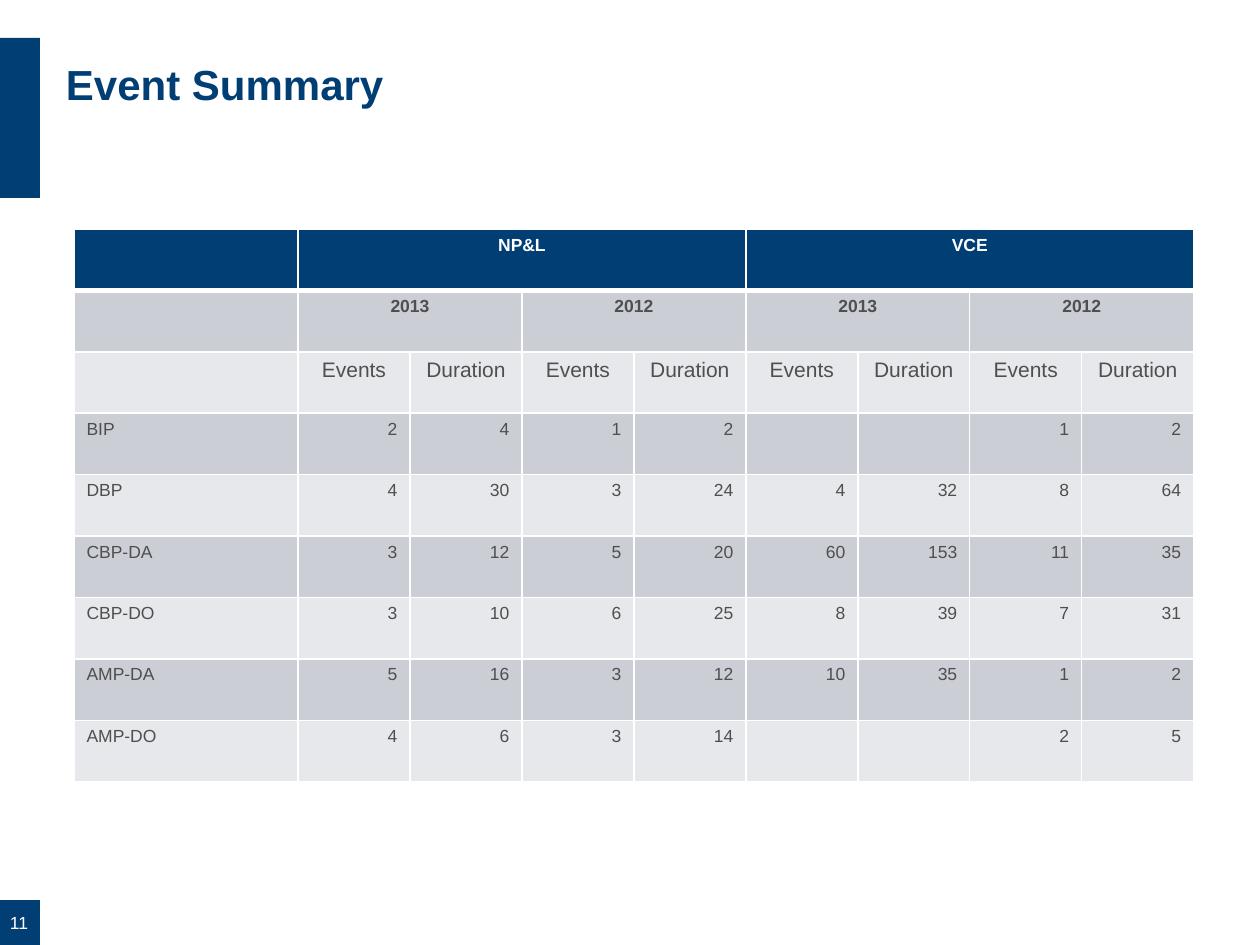
"""Build the Event Summary slide with its table of events and durations."""
from lxml import etree
from pptx import Presentation
from pptx.dml.color import RGBColor
from pptx.enum.shapes import MSO_SHAPE
from pptx.enum.text import MSO_ANCHOR, PP_ALIGN
from pptx.oxml.ns import qn
from pptx.util import Pt

LEFT, CENTER, RIGHT = PP_ALIGN.LEFT, PP_ALIGN.CENTER, PP_ALIGN.RIGHT
TOP, MIDDLE = MSO_ANCHOR.TOP, MSO_ANCHOR.MIDDLE
RECT = MSO_SHAPE.RECTANGLE

PX = 914400 / 126
FONT = "Arial"
COLORS = {"navy": "003E74", "white": "FFFFFF", "text": "4F4F4F",
          "dark band": "CCCED6", "light band": "E7E8EB"}

TITLE = "Event Summary"
PAGE = "11"
UTILITIES = ["NP&L", "VCE"]
YEARS = ["2013", "2012"] * 2
MEASURES = ["Events", "Duration"] * 4
PROGRAMS = [
    ("BIP", 2, 4, 1, 2, "", "", 1, 2),
    ("DBP", 4, 30, 3, 24, 4, 32, 8, 64),
    ("CBP-DA", 3, 12, 5, 20, 60, 153, 11, 35),
    ("CBP-DO", 3, 10, 6, 25, 8, 39, 7, 31),
    ("AMP-DA", 5, 16, 3, 12, 10, 35, 1, 2),
    ("AMP-DO", 4, 6, 3, 14, "", "", 2, 5),
]
BARS = [(0, 38, 40, 160), (0, 900, 40, 45)]
TITLE_BOX = (66, 59, 1116, 50)
PAGE_BOX = (5, 906, 28, 33)
TABLE_BOX = (74, 229, 1120, 553)


def px(*values):
    return [round(v * PX) for v in values]


def rgb(name):
    return RGBColor.from_string(COLORS[name])


def write(tf, text, size, color, align=LEFT, bold=False):
    p = tf.paragraphs[0]
    p.alignment = align
    r = p.add_run()
    r.text = str(text)
    r.font.name, r.font.size, r.font.bold = FONT, Pt(size), bold
    r.font.color.rgb = rgb(color)


def clear_insets(tf, anchor):
    tf.margin_left = tf.margin_right = tf.margin_top = tf.margin_bottom = 0
    tf.vertical_anchor = anchor
    tf.word_wrap = True


def style_cell(cell, fill, top=1, bottom=1):
    tcPr = cell._tc.get_or_add_tcPr()
    for side, width in zip("LRTB", (1, 1, top, bottom)):
        ln = etree.SubElement(tcPr, qn(f"a:ln{side}"), w=str(Pt(width)))
        solid = etree.SubElement(ln, qn("a:solidFill"))
        etree.SubElement(solid, qn("a:srgbClr"), val=COLORS["white"])
    cell.fill.solid()
    cell.fill.fore_color.rgb = rgb(fill)


def add_heading(table, row, labels, size, color, bold):
    span = 8 // len(labels)
    for i, label in enumerate(labels):
        cell = table.cell(row, 1 + i * span)
        if span > 1:
            cell.merge(table.cell(row, (i + 1) * span))
        write(cell.text_frame, label, size, color, CENTER, bold)


def add_table(s):
    x, y, w, h = px(*TABLE_BOX)
    rows = 3 + len(PROGRAMS)
    table = s.shapes.add_table(rows, 9, x, y, w, h).table
    for i, col in enumerate(table.columns):
        col.width = w // 10 * (1 if i else 2)
    for i, row in enumerate(table.rows):
        row.height = h // rows
        fill = ("dark band" if i % 2 else "light band") if i else "navy"
        for cell in row.cells:
            style_cell(cell, fill, top=3 if i == 1 else 1, bottom=1 if i else 3)
    add_heading(table, 0, UTILITIES, 10, "white", True)
    add_heading(table, 1, YEARS, 10, "text", True)
    add_heading(table, 2, MEASURES, 12, "text", False)
    for i, values in enumerate(PROGRAMS, 3):
        for j, value in enumerate(values):
            if value != "":
                write(table.cell(i, j).text_frame, value, 10, "text", RIGHT if j else LEFT)


def main():
    prs = Presentation()
    prs.slide_width, prs.slide_height = px(1260, 945)
    s = prs.slides.add_slide(prs.slide_layouts[5])

    for box in BARS:
        bar = s.shapes.add_shape(RECT, *px(*box))
        bar.shadow.inherit = False
        bar.fill.solid()
        bar.fill.fore_color.rgb = rgb("navy")
        bar.line.fill.background()

    tf = s.shapes.add_textbox(*px(*PAGE_BOX)).text_frame
    clear_insets(tf, MIDDLE)
    write(tf, PAGE, 10, "white", CENTER)

    title = s.shapes.title
    title.left, title.top, title.width, title.height = px(*TITLE_BOX)
    clear_insets(title.text_frame, TOP)
    write(title.text_frame, TITLE, 24, "navy", LEFT, True)

    add_table(s)
    prs.save("out.pptx")


if __name__ == "__main__":
    main()
